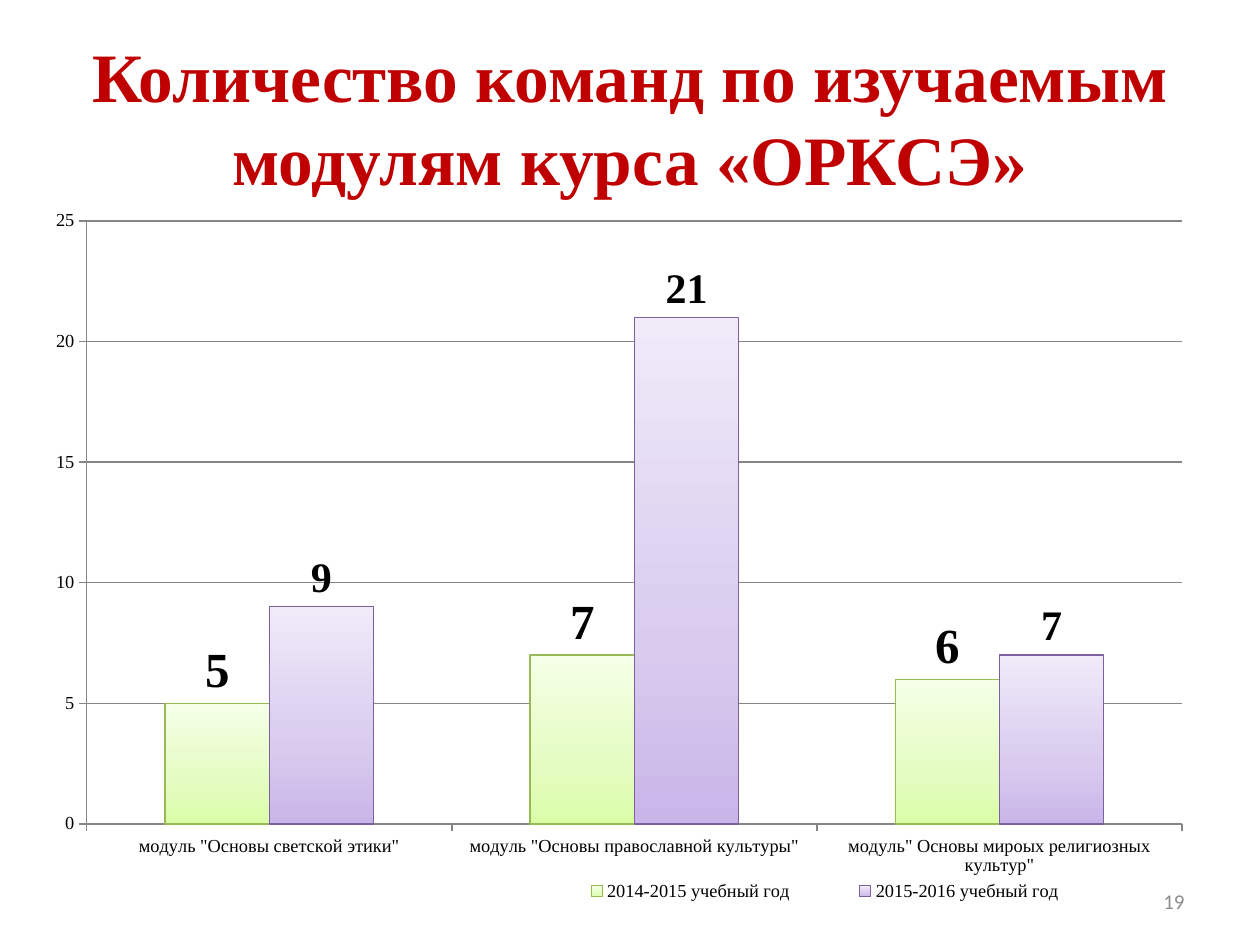
from lxml import etree
from pptx import Presentation
from pptx.chart.data import CategoryChartData
from pptx.dml.color import RGBColor
from pptx.enum.chart import XL_CHART_TYPE, XL_LABEL_POSITION, XL_LEGEND_POSITION, XL_TICK_MARK
from pptx.enum.text import MSO_ANCHOR, MSO_AUTO_SIZE, PP_ALIGN
from pptx.oxml import parse_xml
from pptx.oxml.ns import nsdecls, qn
from pptx.util import Cm, Pt


def color(value):
    return RGBColor.from_string(value)


def set_layout(parent, before, x, y, w, h, inner=False):
    for old in parent.findall(qn("c:layout")):
        parent.remove(old)
    layout = etree.Element(qn("c:layout"))
    manual = etree.SubElement(layout, qn("c:manualLayout"))
    settings = [("xMode", "edge"), ("yMode", "edge"), ("x", x), ("y", y), ("w", w), ("h", h)]
    if inner:
        settings.insert(0, ("layoutTarget", "inner"))
    for tag, value in settings:
        etree.SubElement(manual, qn(f"c:{tag}")).set("val", str(value))
    parent.find(qn(before)).addprevious(layout)


def set_gradient(fmt, stops):
    fmt.fill.solid()
    sp_pr = fmt.fill._xPr
    gs = "".join(
        f'<a:gs pos="{pos * 1000}"><a:srgbClr val="{value}"/></a:gs>' for pos, value in stops
    )
    gradient = parse_xml(
        f'<a:gradFill {nsdecls("a")} rotWithShape="1"><a:gsLst>{gs}</a:gsLst>'
        '<a:lin ang="16200000" scaled="1"/></a:gradFill>'
    )
    sp_pr.replace(sp_pr.find(qn("a:solidFill")), gradient)


class SlideBuilder:
    serif = "Times New Roman"
    sans = "Calibri"
    red = "C00000"
    black = "000000"
    gray = "8C8C8C"
    axis = "868686"

    def __init__(self, prs):
        self.s = prs.slides.add_slide(prs.slide_layouts[5])

    def style(self, font, name, size, value, bold=False):
        font.name, font.size, font.bold = name, Pt(size), bold
        font.color.rgb = color(value)

    def title(self, text, x, y, w, h):
        sp = self.s.shapes.title
        sp.left, sp.top, sp.width, sp.height = Cm(x), Cm(y), Cm(w), Cm(h)
        tf = sp.text_frame
        tf.text = text
        tf.word_wrap = True
        tf.auto_size = MSO_AUTO_SIZE.NONE
        tf.vertical_anchor = MSO_ANCHOR.MIDDLE
        p = tf.paragraphs[0]
        p.alignment = PP_ALIGN.CENTER
        self.style(p.font, self.serif, 39.6, self.red, True)

    def text(self, text, x, y, w, h):
        tf = self.s.shapes.add_textbox(Cm(x), Cm(y), Cm(w), Cm(h)).text_frame
        tf.text = text
        tf.word_wrap = True
        tf.vertical_anchor = MSO_ANCHOR.MIDDLE
        p = tf.paragraphs[0]
        p.alignment = PP_ALIGN.RIGHT
        self.style(p.font, self.sans, 12, self.gray)

    def line(self, line, value):
        line.color.rgb = color(value)
        line.width = Pt(0.75)

    def column_chart(self, categories, series, x, y, w, h):
        data = CategoryChartData(number_format="General")
        data.categories = categories
        for name, values, *_ in series:
            data.add_series(name, values)
        chart = self.s.shapes.add_chart(
            XL_CHART_TYPE.COLUMN_CLUSTERED, Cm(x), Cm(y), Cm(w), Cm(h), data
        ).chart
        chart.has_title = False
        self.style(chart.font, self.serif, 10.5, self.black)
        for axis in (chart.category_axis, chart.value_axis):
            axis.major_tick_mark = XL_TICK_MARK.OUTSIDE
            axis.minor_tick_mark = XL_TICK_MARK.NONE
            self.line(axis.format.line, self.axis)
        values = chart.value_axis
        values.minimum_scale, values.maximum_scale, values.major_unit = 0, 25, 5
        self.line(values.major_gridlines.format.line, self.axis)
        plot = chart.plots[0]
        plot.gap_width, plot.overlap, plot.vary_by_categories = 150, 0, False
        for ser, (_, _, stops, outline, size) in zip(plot.series, series):
            set_gradient(ser.format, stops)
            self.line(ser.format.line, outline)
            labels = ser.data_labels
            labels.show_value = True
            labels.position = XL_LABEL_POSITION.OUTSIDE_END
            self.style(labels.font, self.serif, size, self.black, True)
        chart.has_legend = True
        chart.legend.position = XL_LEGEND_POSITION.RIGHT
        chart.legend.include_in_layout = False
        set_layout(chart.legend._element, "c:overlay", 0.41, 0.94, 0.5, 0.05)
        plot_area = chart._chartSpace.chart.plotArea
        set_layout(plot_area, "c:barChart", 0.04, 0.02, 0.92, 0.85, inner=True)


def main():
    prs = Presentation()
    prs.slide_width, prs.slide_height = Cm(25.4), Cm(19.05)
    builder = SlideBuilder(prs)
    builder.title("Количество команд по изучаемым модулям курса «ОРКСЭ»", 1.27, 0.76, 22.86, 3.18)
    builder.column_chart(
        [
            'модуль "Основы светской этики"',
            'модуль "Основы православной культуры"',
            'модуль" Основы мироых религиозных культур"',
        ],
        [
            ("2014-2015 учебный год", (5, 7, 6),
             [(0, "DAFDA7"), (35, "E4FCC2"), (100, "F5FFE7")], "98B955", 28),
            ("2015-2016 учебный год", (9, 21, 7),
             [(0, "C9B5E8"), (35, "D8CBEE"), (100, "F0EAF9")], "7D60A0", 24),
        ],
        0.79, 4.17, 24, 14.3,
    )
    builder.text("19", 18.2, 17.65, 5.93, 1.02)
    prs.save("out.pptx")


if __name__ == "__main__":
    main()
